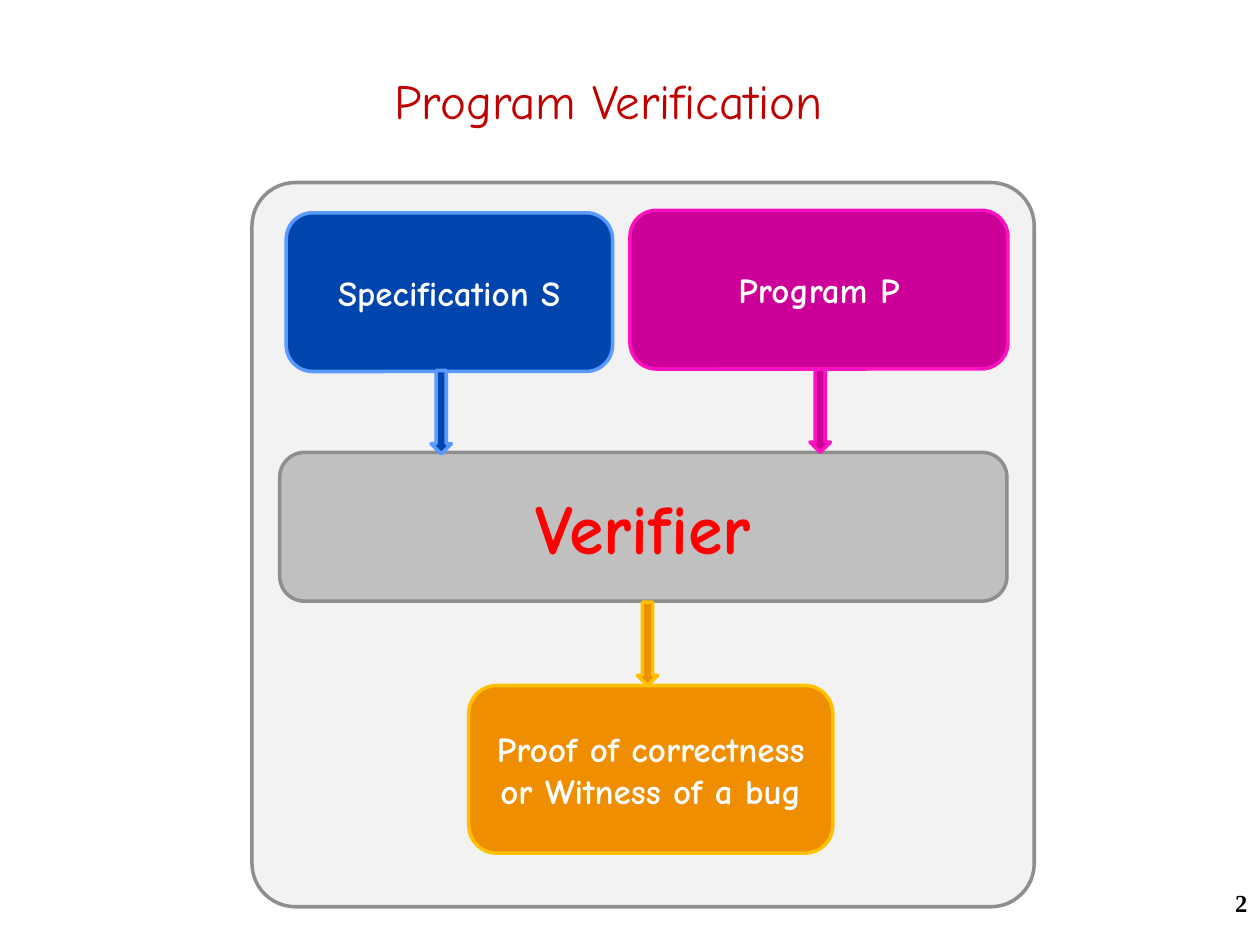
from dataclasses import dataclass

from pptx import Presentation
from pptx.dml.color import RGBColor
from pptx.enum.shapes import MSO_SHAPE
from pptx.enum.text import MSO_ANCHOR, MSO_AUTO_SIZE, PP_ALIGN
from pptx.shapes.autoshape import Shape
from pptx.slide import Slide
from pptx.text.text import TextFrame
from pptx.util import Cm, Pt

ROUNDED = MSO_SHAPE.ROUNDED_RECTANGLE
ALTERNATE = MSO_SHAPE.FLOWCHART_ALTERNATE_PROCESS
DOWN_ARROW = MSO_SHAPE.DOWN_ARROW
TOP, MIDDLE = MSO_ANCHOR.TOP, MSO_ANCHOR.MIDDLE
CENTER, RIGHT = PP_ALIGN.CENTER, PP_ALIGN.RIGHT
NO_AUTOFIT = MSO_AUTO_SIZE.NONE


@dataclass(frozen=True)
class Paint:
    fill: str
    line: str


@dataclass(frozen=True)
class TextStyle:
    size: int
    color: str
    bold: bool = True
    font: str = "Comic Neue"


@dataclass(frozen=True)
class Theme:
    panel: Paint = Paint("F2F2F2", "8E8E8E")
    verifier: Paint = Paint("C0C0C0", "8E8E8E")
    specification: Paint = Paint("0045AD", "589AFF")
    program: Paint = Paint("CC0099", "FF11C1")
    outcome: Paint = Paint("EE8E00", "FFC000")
    title: TextStyle = TextStyle(28, "C00000", bold=False)
    heading: TextStyle = TextStyle(40, "FF0000")
    label: TextStyle = TextStyle(20, "FFFFFF")
    number: TextStyle = TextStyle(14, "000000", font="Times New Roman")
    line_width: int = 2


@dataclass(frozen=True)
class Box:
    """A rectangle in centimetres."""
    left: float
    top: float
    width: float
    height: float

    def lengths(self) -> tuple[Cm, Cm, Cm, Cm]:
        return Cm(self.left), Cm(self.top), Cm(self.width), Cm(self.height)


@dataclass(frozen=True)
class Stage:
    text: str
    box: Box
    paint: Paint
    style: TextStyle
    preset: MSO_SHAPE = ALTERNATE


@dataclass(frozen=True)
class Flow:
    left: float
    top: float
    paint: Paint


THEME = Theme()
ARROW_WIDTH, ARROW_HEIGHT = 0.41, 1.68
PANEL = Box(5.08, 3.68, 15.77, 14.6)
STAGES = [
    Stage("Verifier", Box(5.64, 9.12, 14.66, 3), THEME.verifier, THEME.heading, ROUNDED),
    Stage("Proof of correctness or Witness of a bug",
          Box(9.45, 13.82, 7.34, 3.38), THEME.outcome, THEME.label),
    Stage("Specification S", Box(5.77, 4.29, 6.58, 3.2), THEME.specification, THEME.label),
    Stage("Program P", Box(12.7, 4.24, 7.62, 3.2), THEME.program, THEME.label),
]
FLOWS = [
    Flow(12.85, 12.14, THEME.outcome),
    Flow(8.69, 7.47, THEME.specification),
    Flow(16.33, 7.44, THEME.program),
]


def write(frame: TextFrame, text: str, style: TextStyle,
          align: PP_ALIGN = CENTER, anchor: MSO_ANCHOR = MIDDLE) -> None:
    frame.word_wrap = True
    frame.auto_size = NO_AUTOFIT
    frame.vertical_anchor = anchor
    paragraph = frame.paragraphs[0]
    paragraph.alignment = align
    run = paragraph.add_run()
    run.text = text
    run.font.name = style.font
    run.font.size = Pt(style.size)
    run.font.bold = style.bold
    run.font.color.rgb = RGBColor.from_string(style.color)


def draw_shape(slide: Slide, preset: MSO_SHAPE, box: Box, paint: Paint) -> Shape:
    shape = slide.shapes.add_shape(preset, *box.lengths())
    shape.shadow.inherit = False
    shape.fill.solid()
    shape.fill.fore_color.rgb = RGBColor.from_string(paint.fill)
    shape.line.color.rgb = RGBColor.from_string(paint.line)
    shape.line.width = Pt(THEME.line_width)
    return shape


def draw_stage(slide: Slide, stage: Stage) -> None:
    shape = draw_shape(slide, stage.preset, stage.box, stage.paint)
    write(shape.text_frame, stage.text, stage.style)


def draw_flow(slide: Slide, flow: Flow) -> None:
    box = Box(flow.left, flow.top, ARROW_WIDTH, ARROW_HEIGHT)
    draw_shape(slide, DOWN_ARROW, box, flow.paint)


def main() -> None:
    deck = Presentation()
    deck.slide_width, deck.slide_height = Cm(25.4), Cm(19.05)
    slide = deck.slides.add_slide(deck.slide_layouts.get_by_name("Title Only"))

    title = slide.shapes.title
    title.left, title.top, title.width, title.height = Box(1.47, 0.43, 21.59, 3.18).lengths()
    write(title.text_frame, "Program Verification", THEME.title)

    page_number = slide.shapes.add_textbox(*Box(20.12, 17.78, 5.28, 1.27).lengths())
    write(page_number.text_frame, "2", THEME.number, RIGHT, TOP)

    panel = draw_shape(slide, ROUNDED, PANEL, THEME.panel)
    panel.adjustments[0] = 0.06
    for stage in STAGES:
        draw_stage(slide, stage)
    for flow in FLOWS:
        draw_flow(slide, flow)

    deck.save("out.pptx")


if __name__ == "__main__":
    main()
